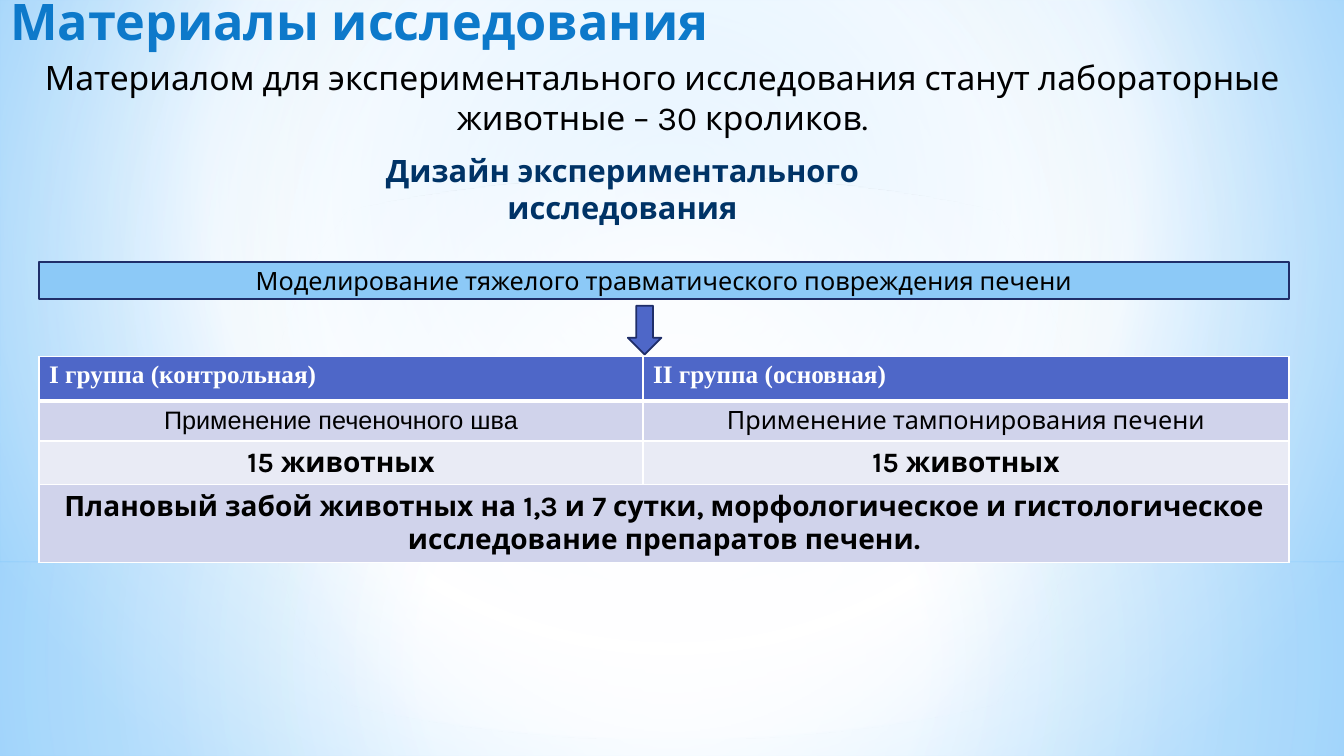
import pptx
import pptx.dml.color
import pptx.enum.shapes
import pptx.enum.text
import pptx.oxml
import pptx.oxml.ns
import pptx.util

COLUMNS, ROWS = 160, 90
SLIDE_WIDTH = pptx.util.Inches(13.33)
SLIDE_HEIGHT = pptx.util.Inches(7.5)
COLORS = {
    "white": "FFFFFF", "black": "000000", "title": "0D79CA", "heading": "003366",
    "header": "4E67C8", "band": "D0D3EB", "light_band": "E9EBF5",
    "bar": "8CC9F7", "outline": "1F2E69",
    "sky": "9ED5FF", "deep_sky": "5BB9FF", "haze": "B4DCFA",
}
ALIGN = pptx.enum.text.PP_ALIGN
ANCHOR = pptx.enum.text.MSO_ANCHOR
SHAPE = pptx.enum.shapes.MSO_SHAPE


def across(columns):
    return round(columns * SLIDE_WIDTH / COLUMNS)


def down(rows):
    return round(rows * SLIDE_HEIGHT / ROWS)


def place(box):
    left, top, width, height = box
    return across(left), down(top), across(width), down(height)


def rgb(name):
    return pptx.dml.color.RGBColor.from_string(COLORS[name])


def write(frame, text, size, color, bold=False, font="Karla", align=ALIGN.CENTER):
    frame.word_wrap = True
    paragraph = frame.paragraphs[0]
    paragraph.text = text
    paragraph.alignment = align
    paragraph.font.name = font
    paragraph.font.size = pptx.util.Pt(size)
    paragraph.font.bold = bold
    paragraph.font.color.rgb = rgb(color)


def set_gradient(parent, stops, focus=None):
    stop_xml = "".join(
        f'<a:gs pos="{position * 1000}"><a:srgbClr val="{COLORS[color]}">'
        f'<a:alpha val="{alpha * 1000}"/></a:srgbClr></a:gs>'
        for position, color, alpha in stops
    )
    if focus:
        sides = " ".join(f'{side}="{share * 1000}"' for side, share in zip("ltrb", focus))
        direction = f'<a:path path="circle"><a:fillToRect {sides}/></a:path>'
    else:
        direction = '<a:lin ang="5400000" scaled="0"/>'
    gradient = pptx.oxml.parse_xml(
        f'<a:gradFill {pptx.oxml.ns.nsdecls("a")} rotWithShape="1">'
        f"<a:gsLst>{stop_xml}</a:gsLst>{direction}</a:gradFill>"
    )
    solid = parent.find(pptx.oxml.ns.qn("a:solidFill"))
    parent.replace(solid, gradient)


def add_filled_shape(slide, kind, box, color, outline=None):
    shape = slide.shapes.add_shape(kind, *place(box))
    shape.shadow.inherit = False
    shape.fill.solid()
    shape.fill.fore_color.rgb = rgb(color)
    if outline:
        shape.line.color.rgb = rgb(outline)
        shape.line.width = pptx.util.Pt(1.25)
    else:
        shape.line.fill.background()
    return shape


def add_backdrop(slide, box):
    left, top, width, height = box
    slide.background.fill.solid()
    slide.background.fill.fore_color.rgb = rgb("white")
    properties = slide.element.find(".//" + pptx.oxml.ns.qn("p:bgPr"))
    set_gradient(properties,
                 [(0, "sky", 100), (60, "white", 100), (100, "deep_sky", 100)],
                 (20, 10, 20, 60))
    centre = (50, 50, 50, 50)
    horizon = 67
    layers = [
        (SHAPE.RECTANGLE, horizon, height - horizon,
         [(0, "white", 91), (37, "white", 76), (100, "haze", 79)], centre),
        (SHAPE.RECTANGLE, 0, horizon,
         [(0, "white", 89), (48, "white", 62), (100, "haze", 79)], centre),
        (SHAPE.RECTANGLE, 49.5, 30,
         [(0, "white", 0), (29, "white", 30), (45, "haze", 40),
          (55, "white", 26), (65, "haze", 60), (100, "white", 0)], None),
        (SHAPE.OVAL, 21, horizon, [(0, "white", 100), (56, "white", 0)], centre),
    ]
    for kind, offset, depth, stops, focus in layers:
        shape = add_filled_shape(slide, kind, (left, top + offset, width, depth), "white")
        set_gradient(shape.element.spPr, stops, focus)


def add_title(slide, box):
    title = slide.shapes.title
    title.left, title.top, title.width, title.height = place(box)
    title.element.getparent().append(title.element)
    frame = title.text_frame
    frame.auto_size = pptx.enum.text.MSO_AUTO_SIZE.NONE
    frame.vertical_anchor = ANCHOR.TOP
    write(frame, "Материалы исследования", 36, "title", True, align=ALIGN.LEFT)


def add_text(slide, box, text, size, color, bold=False):
    frame = slide.shapes.add_textbox(*place(box)).text_frame
    write(frame, text, size, color, bold)


def add_introduction(slide, box):
    left, top, width, height = box
    add_text(slide, (left, top, width, 10.9),
             "Материалом для экспериментального исследования станут "
             "лабораторные животные – 30 кроликов.", 24, "black")
    add_text(slide, (left + 31.8, top + 11.3, 81.2, height - 11.3),
             "Дизайн экспериментального исследования", 22, "heading", True)


def set_borders(cell, bottom_width):
    properties = cell._tc.get_or_add_tcPr()
    widths = {"L": 1, "R": 1, "T": 1, "B": bottom_width}
    for index, (side, width) in enumerate(widths.items()):
        properties.insert(index, pptx.oxml.parse_xml(
            f'<a:ln{side} {pptx.oxml.ns.nsdecls("a")} w="{pptx.util.Pt(width)}">'
            f'<a:solidFill><a:srgbClr val="{COLORS["white"]}"/></a:solidFill></a:ln{side}>'
        ))


def add_groups_table(slide, box, column_widths, row_heights):
    table = slide.shapes.add_table(len(row_heights), len(column_widths), *place(box)).table
    table.horz_banding = False
    for column, width in zip(table.columns, column_widths):
        column.width = across(width)
    for row, height in zip(table.rows, row_heights):
        row.height = down(height)
    table.cell(3, 0).merge(table.cell(3, 1))
    contents = [
        ["I группа (контрольная)", "II группа (основная)"],
        ["Применение печеночного шва", "Применение тампонирования печени"],
        ["15 животных", "15 животных"],
        ["Плановый забой животных на 1,3 и 7 сутки, морфологическое и "
         "гистологическое исследование препаратов печени."],
    ]
    fills = ["header", "band", "light_band", "band"]
    for row_index, texts in enumerate(contents):
        header = row_index == 0
        for column_index in range(len(column_widths)):
            cell = table.cell(row_index, column_index)
            cell.fill.solid()
            cell.fill.fore_color.rgb = rgb(fills[row_index])
            set_borders(cell, 3 if header else 1)
            cell.vertical_anchor = ANCHOR.TOP if header else ANCHOR.MIDDLE
        for column_index, text in enumerate(texts):
            frame = table.cell(row_index, column_index).text_frame
            if header:
                write(frame, text, 18, "white", True, "Times New Roman", ALIGN.LEFT)
            elif row_index == 1:
                write(frame, text, 18, "black", font=("Arial", "Karla")[column_index])
            else:
                write(frame, text, 20, "black", True)


def add_experiment(slide, box):
    left, top, width, height = box
    column_widths = [71.9, width - 71.9]
    row_heights = [5.3, 4.8, 5.2, 9.2]
    table_height = sum(row_heights)
    table_top = top + height - table_height
    add_groups_table(slide, (left, table_top, width, table_height),
                     column_widths, row_heights)
    bar = add_filled_shape(slide, SHAPE.RECTANGLE, (left, top, width, 4.4), "bar", "outline")
    bar.text_frame.vertical_anchor = ANCHOR.MIDDLE
    write(bar.text_frame, "Моделирование тяжелого травматического повреждения печени",
          18, "black")
    arrow_width, arrow_height = 4, 5.8
    arrow_left = left + column_widths[0] - arrow_width / 2 + 0.2
    add_filled_shape(slide, SHAPE.DOWN_ARROW,
                     (arrow_left, table_top - arrow_height - 0.2, arrow_width, arrow_height),
                     "header", "outline")


def main():
    presentation = pptx.Presentation()
    presentation.slide_width = SLIDE_WIDTH
    presentation.slide_height = SLIDE_HEIGHT
    slide = presentation.slides.add_slide(presentation.slide_layouts[5])
    add_backdrop(slide, (0, 0, COLUMNS, ROWS))
    add_title(slide, (0, -1.8, COLUMNS, 12.7))
    add_introduction(slide, (1.7, 6.2, 154.3, 16.9))
    add_experiment(slide, (4.65, 31.2, 148.8, 35.7))
    presentation.save("out.pptx")


if __name__ == "__main__":
    main()
